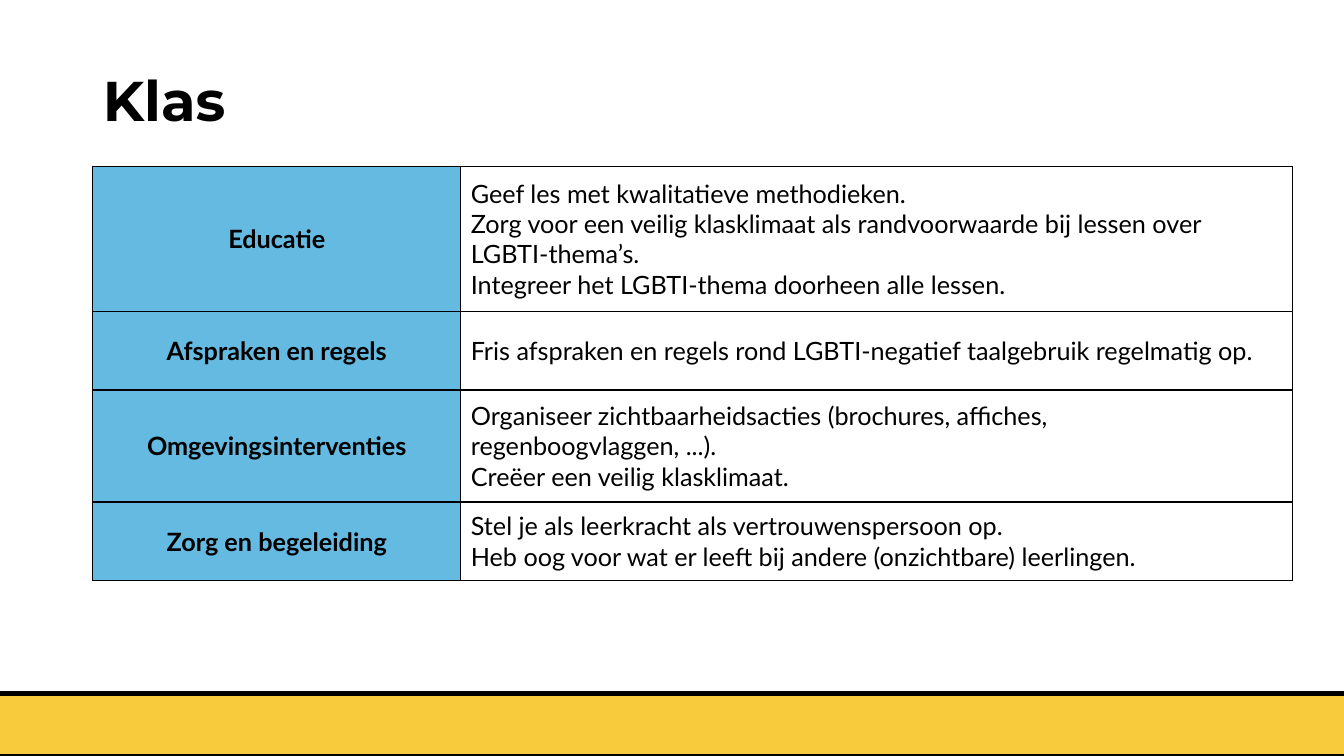
from lxml.etree import SubElement
from pptx import Presentation
from pptx.dml.color import RGBColor
from pptx.enum.shapes import MSO_SHAPE as Shape
from pptx.enum.text import MSO_ANCHOR as Anchor, PP_ALIGN as Align
from pptx.oxml.ns import qn
from pptx.util import Inches, Pt

BLACK = RGBColor(0x00, 0x00, 0x00)
WHITE = RGBColor(0xFF, 0xFF, 0xFF)
YELLOW = RGBColor(0xF7, 0xCB, 0x3B)
BLUE = RGBColor(0x65, 0xBA, 0xE1)

COLUMN_WIDTHS = [3.65, 8.25]
# Topic, row height in inches, recommendations
TOPICS = [
    ("Educatie", 1.44, [
        "Geef les met kwalitatieve methodieken.",
        "Zorg voor een veilig klasklimaat als randvoorwaarde bij lessen over LGBTI-thema’s.",
        "Integreer het LGBTI-thema doorheen alle lessen.",
    ]),
    ("Afspraken en regels", 0.78, [
        "Fris afspraken en regels rond LGBTI-negatief taalgebruik regelmatig op.",
    ]),
    ("Omgevingsinterventies", 1.11, [
        "Organiseer zichtbaarheidsacties (brochures, affiches, regenboogvlaggen, ...).",
        "Creëer een veilig klasklimaat.",
    ]),
    ("Zorg en begeleiding", 0.78, [
        "Stel je als leerkracht als vertrouwenspersoon op.",
        "Heb oog voor wat er leeft bij andere (onzichtbare) leerlingen.",
    ]),
]


def format_text(frame, font_name, size, bold, align):
    for paragraph in frame.paragraphs:
        paragraph.alignment = align
        for run in paragraph.runs:
            run.font.name = font_name
            run.font.size = Pt(size)
            run.font.bold = bold
            run.font.color.rgb = BLACK


def add_footer_band(slide, left, top, width, height):
    band = slide.shapes.add_shape(
        Shape.RECTANGLE, Inches(left), Inches(top), Inches(width), Inches(height))
    band.shadow.inherit = False
    band.fill.solid()
    band.fill.fore_color.rgb = YELLOW
    band.line.color.rgb = BLACK
    band.line.width = Pt(3)


def fill_title(slide, left, top, width, height):
    title = slide.shapes.title
    title.left, title.top = Inches(left), Inches(top)
    title.width, title.height = Inches(width), Inches(height)
    frame = title.text_frame
    frame.text = "Klas"
    frame.vertical_anchor = Anchor.MIDDLE
    frame.paragraphs[0].line_spacing = 0.9
    format_text(frame, "Montserrat", 40, True, Align.LEFT)


def add_borders(cell):
    properties = cell._tc.get_or_add_tcPr()
    for side in ("a:lnL", "a:lnR", "a:lnT", "a:lnB"):
        border = SubElement(properties, qn(side), w=str(Pt(1)))
        solid = SubElement(border, qn("a:solidFill"))
        SubElement(solid, qn("a:srgbClr"), val=str(BLACK))


def fill_cell(cell, text, color, bold, align):
    cell.text_frame.text = text
    cell.vertical_anchor = Anchor.MIDDLE
    format_text(cell.text_frame, "Lato", 18, bold, align)
    # Borders come before the fill in the cell properties
    add_borders(cell)
    cell.fill.solid()
    cell.fill.fore_color.rgb = color


def add_topic_table(slide, left, top, width, height):
    table = slide.shapes.add_table(
        len(TOPICS), len(COLUMN_WIDTHS),
        Inches(left), Inches(top), Inches(width), Inches(height)).table
    table.first_row = False
    table.horz_banding = False
    for column, column_width in zip(table.columns, COLUMN_WIDTHS):
        column.width = Inches(column_width)
    for row, (topic, row_height, advice) in zip(table.rows, TOPICS):
        row.height = Inches(row_height)
        topic_cell, advice_cell = row.cells
        fill_cell(topic_cell, topic, BLUE, True, Align.CENTER)
        fill_cell(advice_cell, "\n".join(advice), WHITE, False, Align.LEFT)


def main():
    deck = Presentation()
    deck.slide_width, deck.slide_height = Inches(13.33), Inches(7.5)
    slide = deck.slides.add_slide(deck.slide_layouts[5])  # Title Only
    add_footer_band(slide, -0.37, 6.88, 14.07, 0.62)
    fill_title(slide, 0.92, 0.4, 11.5, 1.25)
    add_topic_table(slide, 0.92, 1.65, 11.9, 4.11)
    deck.save("out.pptx")


if __name__ == "__main__":
    main()
